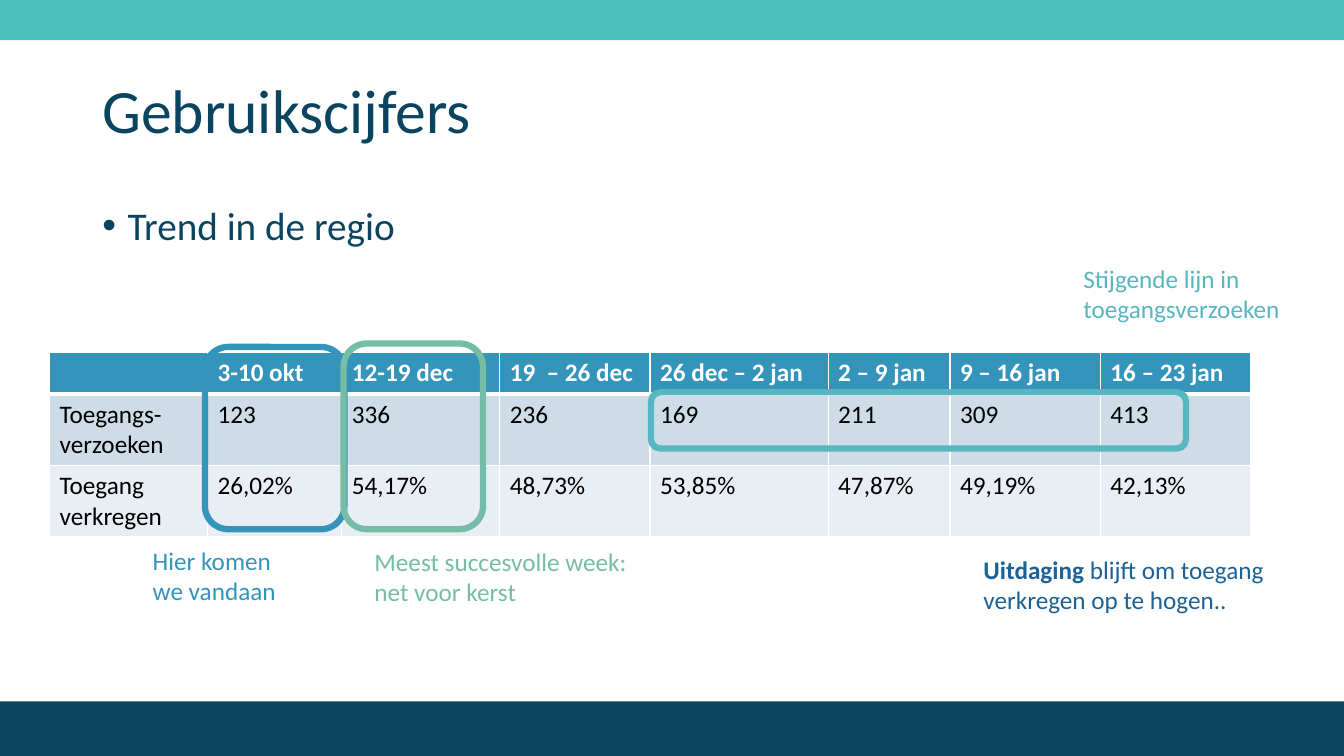
import pptx
import pptx.dml.color
import pptx.enum.shapes
import pptx.enum.text
import pptx.oxml
import pptx.oxml.ns
import pptx.util

COLORS = {
    "navy": "0A445F", "teal": "4BC2BA", "blue": "3494BA", "green": "75BDA7",
    "aqua": "58B6C0", "deep": "1D6294", "white": "FFFFFF", "black": "000000",
    "band": "CEDCE7", "pale": "E8EEF3",
}
SHAPES = pptx.enum.shapes.MSO_SHAPE
RGB = pptx.dml.color.RGBColor.from_string

deck = pptx.Presentation()
deck.slide_width = pptx.util.Inches(13.33)
deck.slide_height = pptx.util.Inches(7.5)
page = deck.slides.add_slide(deck.slide_layouts[6])
column = deck.slide_width / 160
row = deck.slide_height / 90


def place(left, top, width, height):
    return int(left * column), int(top * row), int(width * column), int(height * row)


def style(para, size, color, bold=None):
    para.font.name = "Calibri"
    para.font.size = pptx.util.Pt(size)
    para.font.color.rgb = RGB(COLORS[color])
    para.font.bold = bold


for top, height, color in [(83.5, 6.5, "navy"), (-0.5, 5.3, "teal")]:
    bar = page.shapes.add_shape(SHAPES.RECTANGLE, *place(0, top, 160, height))
    bar.shadow.inherit = False
    bar.fill.solid()
    bar.fill.fore_color.rgb = RGB(COLORS[color])
    bar.line.fill.background()

title = page.shapes.add_textbox(*place(11, 4.8, 138, 17.4)).text_frame
title.word_wrap = True
title.vertical_anchor = pptx.enum.text.MSO_ANCHOR.MIDDLE
title.text = "Gebruikscijfers"
title.paragraphs[0].line_spacing = 0.9
style(title.paragraphs[0], 44, "navy")

body = page.shapes.add_textbox(*place(11, 24, 138, 57)).text_frame
body.word_wrap = True
body.text = "Trend in de regio"
para = body.paragraphs[0]
para.line_spacing = 0.9
settings = para._p.get_or_add_pPr()
settings.set("marL", str(int(3 * column)))
settings.set("indent", str(int(-3 * column)))
namespace = pptx.oxml.ns.nsdecls("a")
settings.append(pptx.oxml.parse_xml(f'<a:buFont {namespace} typeface="Arial"/>'))
settings.append(pptx.oxml.parse_xml(f'<a:buChar {namespace} char="•"/>'))
style(para, 28, "navy")

figures = [
    ["", "3-10 okt", "12-19 dec", "19  – 26 dec", "26 dec – 2 jan",
     "2 – 9 jan", "9 – 16 jan", "16 – 23 jan"],
    ["Toegangs-verzoeken", "123", "336", "236", "169", "211", "309", "413"],
    ["Toegang verkregen", "26,02%", "54,17%", "48,73%", "53,85%",
     "47,87%", "49,19%", "42,13%"],
]
widths = [18.8, 16, 18.8, 17.9, 21.2, 14.5, 17.9, 17.9]
heights = [4.9, 8.5, 8.5]
fills = ["blue", "band", "pale"]
table = page.shapes.add_table(
    len(heights), len(widths), *place(5.9, 42, sum(widths), sum(heights))).table
for index, width in enumerate(widths):
    table.columns[index].width = int(width * column)
for level, values in enumerate(figures):
    table.rows[level].height = int(heights[level] * row)
    edges = {"lnL": 1, "lnR": 1, "lnT": 3 if level == 1 else 1, "lnB": 3 if level == 0 else 1}
    for index, value in enumerate(values):
        cell = table.cell(level, index)
        cell.text = value
        header = level == 0
        style(cell.text_frame.paragraphs[0], 18, "white" if header else "black", header)
        borders = cell._tc.get_or_add_tcPr()
        for edge, points in edges.items():
            borders.append(pptx.oxml.parse_xml(
                f'<a:{edge} {namespace} w="{pptx.util.Pt(points)}"><a:solidFill>'
                f'<a:srgbClr val="{COLORS["white"]}"/></a:solidFill></a:{edge}>'))
        cell.fill.solid()
        cell.fill.fore_color.rgb = RGB(COLORS[fills[level]])

highlights = [
    (24.4, 41.3, 16.6, 21.7, "blue"),
    (40.9, 40.9, 16.6, 22.1, "green"),
    (77.5, 46.7, 63.7, 6.7, "aqua"),
]
for left, top, width, height, color in highlights:
    frame = page.shapes.add_shape(
        SHAPES.ROUNDED_RECTANGLE, *place(left, top, width, height))
    frame.shadow.inherit = False
    frame.fill.background()
    frame.line.color.rgb = RGB(COLORS[color])
    frame.line.width = pptx.util.Pt(4.5)

remarks = [
    (17, 64.3, 19.4, "blue", "", "Hier komen we vandaan"),
    (43.4, 64.4, 34.1, "green", "", "Meest succesvolle week: net voor kerst"),
    (127.8, 30.7, 31.2, "aqua", "", "Stijgende lijn in toegangsverzoeken"),
    (115.9, 65.4, 39.1, "deep", "Uitdaging", " blijft om toegang verkregen op te hogen.."),
]
for left, top, width, color, stress, words in remarks:
    box = page.shapes.add_textbox(*place(left, top, width, 8.5))
    box.text_frame.word_wrap = True
    para = box.text_frame.paragraphs[0]
    style(para, 18, color)
    if stress:
        span = para.add_run()
        span.text = stress
        span.font.bold = True
    para.add_run().text = words

deck.save("out.pptx")
